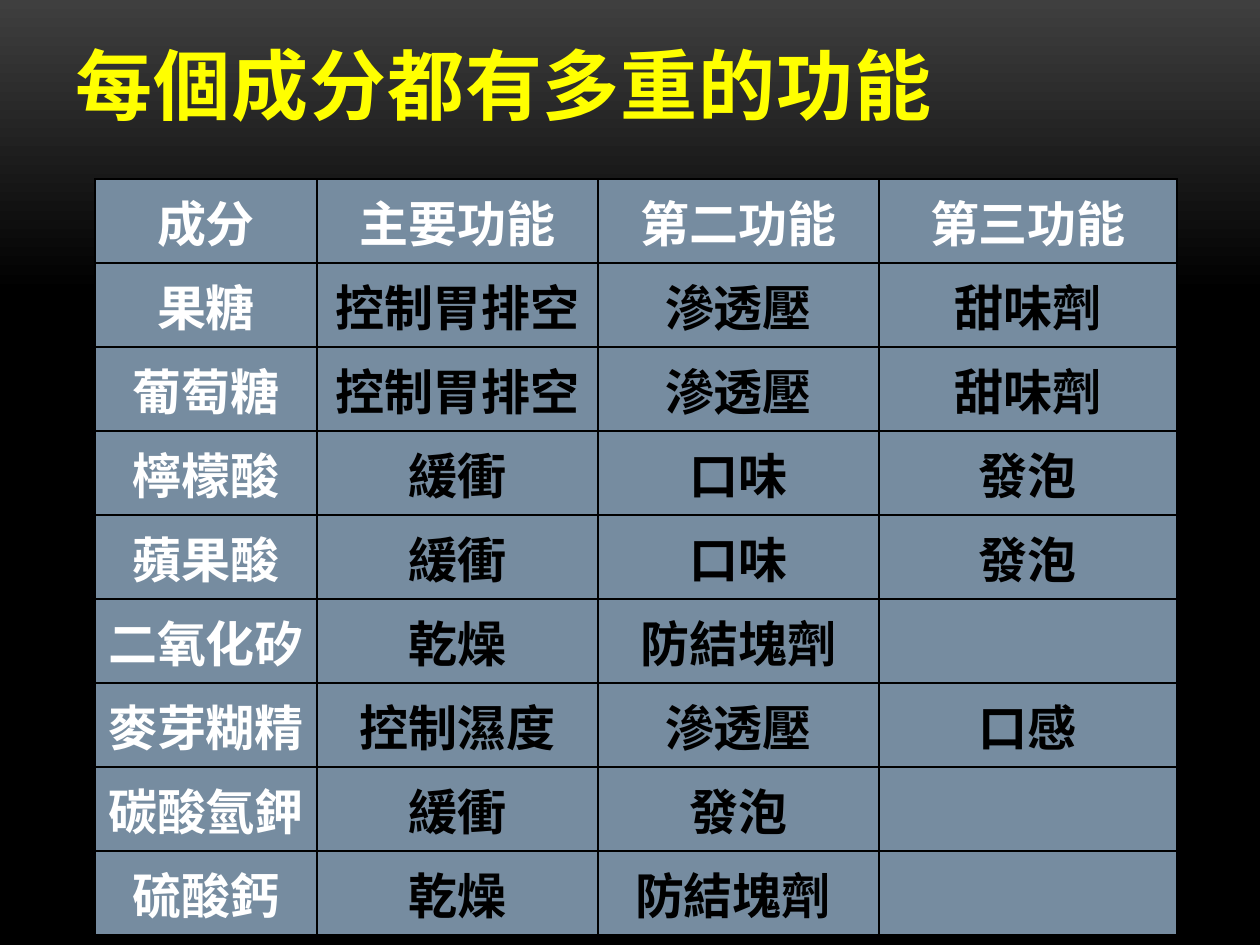
from lxml import etree
from pptx import Presentation
from pptx.dml.color import RGBColor
from pptx.enum.text import MSO_ANCHOR, MSO_AUTO_SIZE, PP_ALIGN
from pptx.oxml.ns import qn
from pptx.util import Pt

PX = 914400 // 126
CJK_FONT = "Noto Sans CJK SC"
YELLOW, WHITE, BLACK, SLATE = "FFFF00", "FFFFFF", "000000", "768CA0"

COLUMN_WIDTHS = [222, 281, 281, 298]
ROWS = [
    ["成分", "主要功能", "第二功能", "第三功能"],
    ["果糖", "控制胃排空", "滲透壓", "甜味劑"],
    ["葡萄糖", "控制胃排空", "滲透壓", "甜味劑"],
    ["檸檬酸", "緩衝", "口味", "發泡"],
    ["蘋果酸", "緩衝", "口味", "發泡"],
    ["二氧化矽", "乾燥", "防結塊劑", ""],
    ["麥芽糊精", "控制濕度", "滲透壓", "口感"],
    ["碳酸氫鉀", "緩衝", "發泡", ""],
    ["硫酸鈣", "乾燥", "防結塊劑 ", ""],
]


def rgb(color):
    return RGBColor.from_string(color)


def px(*lengths):
    return [n * PX for n in lengths]


def style(p, size, color, font, align):
    p.alignment = align
    p.font.size, p.font.bold, p.font.name = Pt(size), True, font
    p.font.color.rgb = rgb(color)
    props = p._p.pPr.find(qn("a:defRPr"))
    etree.SubElement(props, qn("a:ea"), typeface=CJK_FONT)
    return props


def add_borders(cell, color):
    """Draw a 1 pt line on all four sides; call before filling the cell."""
    props = cell._tc.get_or_add_tcPr()
    for side in ("lnL", "lnR", "lnT", "lnB"):
        line = etree.SubElement(props, qn(f"a:{side}"), w=str(Pt(1)))
        fill = etree.SubElement(line, qn("a:solidFill"))
        etree.SubElement(fill, qn("a:srgbClr"), val=color)


def paint_background(s):
    fill = s.background.fill
    fill.gradient()
    fill.gradient_angle = 270
    for stop, color, position in zip(fill.gradient_stops, ("3F3F3F", BLACK), (0, 0.31)):
        stop.color.rgb = rgb(color)
        stop.position = position


def place_title(s, text, left, top, width, height):
    title = s.shapes.title
    title.left, title.top, title.width, title.height = px(left, top, width, height)
    tf = title.text_frame
    tf.text = text
    tf.word_wrap = True
    tf.auto_size = MSO_AUTO_SIZE.NONE
    tf.vertical_anchor = MSO_ANCHOR.BOTTOM
    props = style(tf.paragraphs[0], 44, YELLOW, CJK_FONT, PP_ALIGN.LEFT)
    props.set("spc", "50")


def add_function_table(s, rows, left, top, row_height):
    box = px(left, top, sum(COLUMN_WIDTHS), row_height * len(rows))
    table = s.shapes.add_table(len(rows), len(COLUMN_WIDTHS), *box).table
    for column, width in zip(table.columns, px(*COLUMN_WIDTHS)):
        column.width = width
    for i, row in enumerate(rows):
        table.rows[i].height = row_height * PX
        for j, text in enumerate(row):
            cell = table.cell(i, j)
            add_borders(cell, BLACK)
            cell.fill.solid()
            cell.fill.fore_color.rgb = rgb(SLATE)
            cell.vertical_anchor = MSO_ANCHOR.MIDDLE
            cell.text = text
            color = WHITE if i == 0 or j == 0 else BLACK
            style(cell.text_frame.paragraphs[0], 28, color,
                  "Times New Roman", PP_ALIGN.CENTER)


def main():
    prs = Presentation()
    prs.slide_width, prs.slide_height = px(1260, 945)
    s = prs.slides.add_slide(prs.slide_layouts[5])
    paint_background(s)
    place_title(s, "每個成分都有多重的功能", 63, -21, 1134, 157)
    add_function_table(s, ROWS, 95, 179, 84)
    prs.save("out.pptx")


if __name__ == "__main__":
    main()
